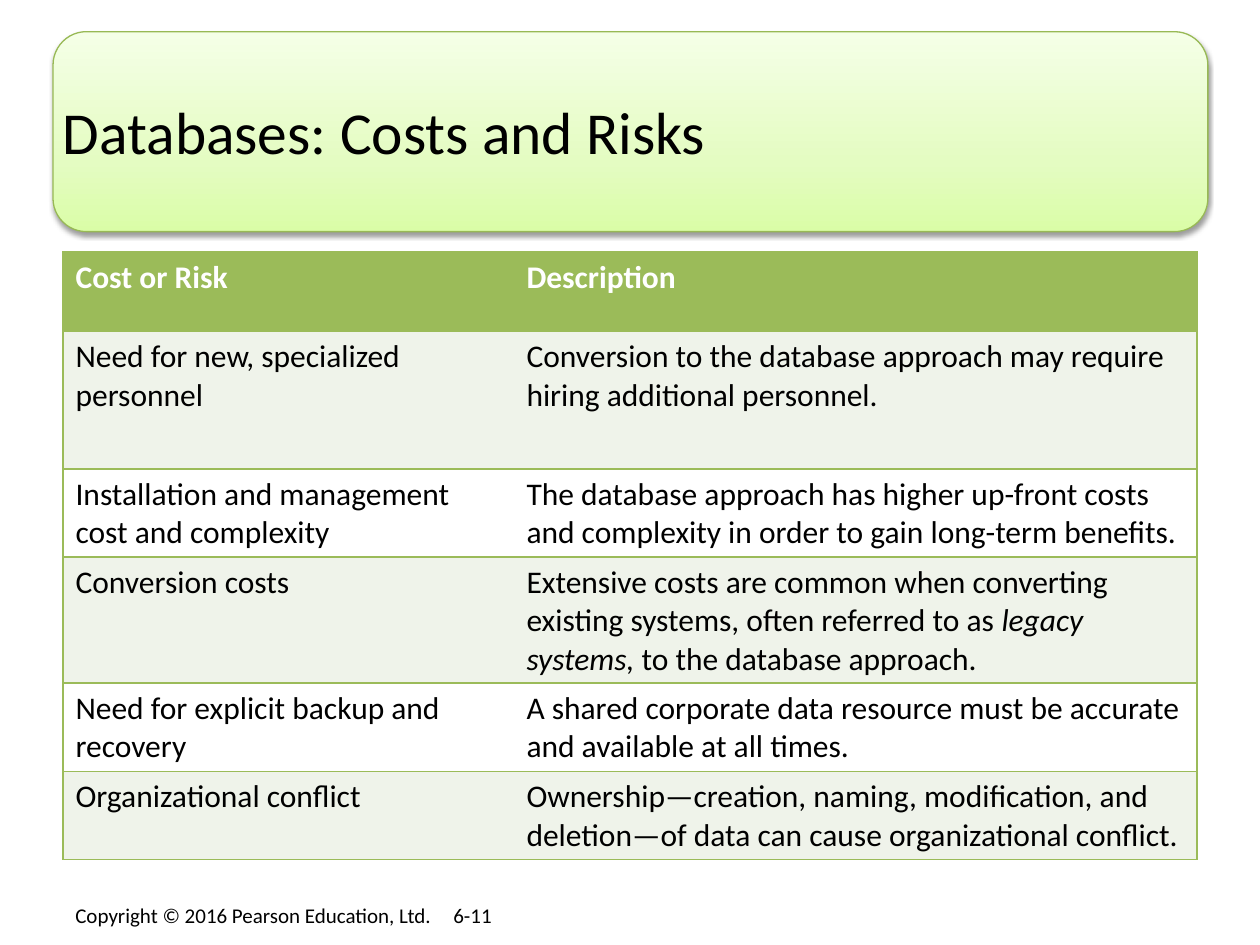
from copy import deepcopy
from lxml import etree
from pptx import Presentation
from pptx.dml.color import RGBColor
from pptx.enum.shapes import MSO_SHAPE
from pptx.enum.text import MSO_ANCHOR
from pptx.oxml import parse_xml
from pptx.oxml.ns import nsdecls, qn
from pptx.util import Cm, Pt

ROUND = MSO_SHAPE.ROUNDED_RECTANGLE
MIDDLE = MSO_ANCHOR.MIDDLE
HUES = {"green": "9BBB59", "edge": "98B955", "band": "EFF3EA",
        "white": "FFFFFF", "black": "000000",
        "deep": "DAFDA7", "mid": "E4FCC2", "pale": "F5FFE7"}


def rgb(name):
    return RGBColor.from_string(HUES[name])


def style(para, size, hue="black", bold=False):
    for run in para.runs:
        font = run.font
        font.name, font.size, font.bold = "Calibri", Pt(size), bold
        font.color.rgb = rgb(hue)


deck = Presentation()
deck.slide_width, deck.slide_height = Cm(25.4), Cm(19.05)
slide = deck.slides.add_slide(deck.slide_layouts[6])
shapes = slide.shapes

foot = shapes.add_textbox(Cm(1.27), Cm(18.06), Cm(22.86), Cm(0.76))
foot.text_frame.word_wrap = True
para = foot.text_frame.paragraphs[0]
para.text = "Copyright © 2016 Pearson Education, Ltd. \t6-11"
tabs = etree.SubElement(para._p.get_or_add_pPr(), qn("a:tabLst"))
etree.SubElement(tabs, qn("a:tab"), pos=str(Cm(7.62)), algn="l")
style(para, 12)

panel = shapes.add_shape(ROUND, Cm(1.07), Cm(0.64), Cm(23.28), Cm(4.03))
panel.line.color.rgb = rgb("edge")
panel.line.width = Pt(0.75)
panel.fill.gradient()
panel.fill.gradient_angle = 90
first = panel._element.spPr.find(".//" + qn("a:gs"))
first.addnext(deepcopy(first))
blend = [(0, "deep"), (0.35, "mid"), (1, "pale")]
for stop, (place, hue) in zip(panel.fill.gradient_stops, blend):
    stop.position = place
    stop.color.rgb = rgb(hue)
panel.shadow.inherit = False
panel._element.spPr.find(qn("a:effectLst")).append(parse_xml(
    f'<a:outerShdw {nsdecls("a")} blurRad="{Pt(3.1)}" dist="{Pt(1.6)}" '
    'dir="5400000" rotWithShape="0"><a:srgbClr val="000000">'
    '<a:alpha val="38000"/></a:srgbClr></a:outerShdw>'))

title = shapes.add_textbox(Cm(1.27), Cm(0.84), Cm(22.86), Cm(3.6))
frame = title.text_frame
frame.word_wrap = True
frame.vertical_anchor = MIDDLE
frame.margin_left = frame.margin_right = 0
frame.margin_top = frame.margin_bottom = 0
frame.text = "Databases: Costs and Risks"
style(frame.paragraphs[0], 34)

rows = [
    ("Cost or Risk", ["Description"]),
    ("Need for new, specialized personnel",
     ["Conversion to the database approach may require hiring additional personnel."]),
    ("Installation and management cost and complexity",
     ["The database approach has higher up-front costs and complexity "
      "in order to gain long-term benefits."]),
    ("Conversion costs",
     ["Extensive costs are common when converting existing systems, often referred to as ",
      "legacy systems, ", "to the database approach."]),
    ("Need for explicit backup and recovery",
     ["A shared corporate data resource must be accurate and available at all times."]),
    ("Organizational conflict",
     ["Ownership—creation, naming, modification, and deletion—of data "
      "can cause organizational conflict."]),
]
table = shapes.add_table(len(rows), 2, Cm(1.27), Cm(5.08), Cm(22.86), Cm(10.77)).table
table.horz_banding = False
table.columns[0].width, table.columns[1].width = Cm(9.09), Cm(13.77)
for r, (risk, parts) in enumerate(rows):
    table.rows[r].height = Cm(2.77 if r == 1 else 1.6)
    for c, texts in enumerate([[risk], parts]):
        cell = table.cell(r, c)
        para = cell.text_frame.paragraphs[0]
        for i, text in enumerate(texts):
            run = para.add_run()
            run.text = text
            run.font.italic = i == 1
        style(para, 18, "black" if r else "white", r == 0)
        props = cell._tc.get_or_add_tcPr()
        inner = "R" if c == 0 else "L"
        for side in "LRTB":
            edge = etree.SubElement(props, qn("a:ln" + side), w=str(Pt(1)))
            if side == inner:
                etree.SubElement(edge, qn("a:noFill"))
            else:
                fill = etree.SubElement(edge, qn("a:solidFill"))
                etree.SubElement(fill, qn("a:srgbClr"), val=HUES["green"])
        cell.fill.solid()
        cell.fill.fore_color.rgb = rgb("green" if r == 0 else "band" if r % 2 else "white")

deck.save("out.pptx")
